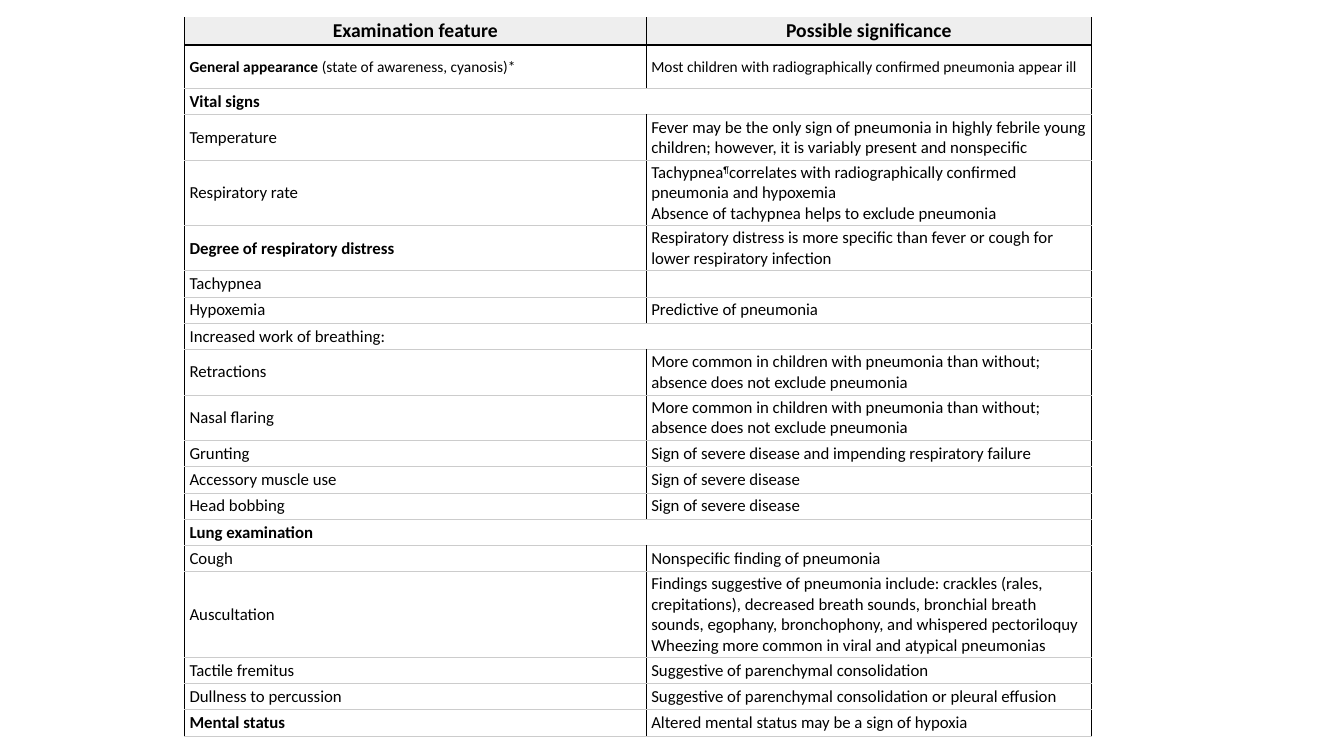
from lxml import etree
from pptx import Presentation
from pptx.dml.color import RGBColor
from pptx.enum.text import MSO_ANCHOR, PP_ALIGN
from pptx.oxml.ns import qn
from pptx.util import Pt

MID = MSO_ANCHOR.MIDDLE
LEFT = PP_ALIGN.LEFT
CENTER = PP_ALIGN.CENTER

BLACK, GRAY, PALE, WHITE = "000000", "CCCCCC", "EEEEEE", "FFFFFF"
ONE, TALL, TWO, THREE, FOUR = 18.72, 31.2, 32.6, 44.64, 58.32
COLS = [329.8, 318.2]


def color(code):
    return RGBColor.from_string(code)


def bold(text):
    return (text, True, False)


def plain(text):
    return (text, False, False)


def raised(text):
    return (text, False, True)


HEAD = ["Examination feature", "Possible significance"]
LEAD = [[bold("General appearance"), plain(" (state of awareness, cyanosis)*")]]
RATE = [
    [plain("Tachypnea"), raised("¶"),
     plain("correlates with radiographically confirmed pneumonia and hypoxemia")],
    [plain("Absence of tachypnea helps to exclude pneumonia")],
]
SOUNDS = [
    [plain("Findings suggestive of pneumonia include: crackles (rales, crepitations), "
           "decreased breath sounds, bronchial breath sounds, egophany, bronchophony, "
           "and whispered pectoriloquy")],
    [plain("Wheezing more common in viral and atypical pneumonias")],
]
COMMON = "More common in children with pneumonia than without; absence does not exclude pneumonia"
SEVERE = "Sign of severe disease"

ROWS = [
    (TALL, LEAD, "Most children with radiographically confirmed pneumonia appear ill"),
    (ONE, [[bold("Vital signs")]], None),
    (TWO, "Temperature", "Fever may be the only sign of pneumonia in highly febrile young "
     "children; however, it is variably present and nonspecific"),
    (THREE, "Respiratory rate", RATE),
    (TALL, [[bold("Degree of respiratory distress")]],
     "Respiratory distress is more specific than fever or cough for lower respiratory infection"),
    (ONE, "Tachypnea", ""),
    (ONE, "Hypoxemia", "Predictive of pneumonia"),
    (ONE, "Increased work of breathing:", None),
    (TWO, "Retractions", COMMON),
    (TWO, "Nasal flaring", COMMON),
    (ONE, "Grunting", "Sign of severe disease and impending respiratory failure"),
    (ONE, "Accessory muscle use", SEVERE),
    (ONE, "Head bobbing", SEVERE),
    (ONE, [[bold("Lung examination")]], None),
    (ONE, "Cough", "Nonspecific finding of pneumonia"),
    (FOUR, "Auscultation", SOUNDS),
    (ONE, "Tactile fremitus", "Suggestive of parenchymal consolidation"),
    (ONE, "Dullness to percussion", "Suggestive of parenchymal consolidation or pleural effusion"),
    (ONE, [[bold("Mental status")]], "Altered mental status may be a sign of hypoxia"),
]


class Deck:
    font = "Calibri"

    def __init__(self, width, height):
        self.show = Presentation()
        self.show.slide_width, self.show.slide_height = Pt(width), Pt(height)
        self.slide = self.show.slides.add_slide(self.show.slide_layouts[6])

    def table(self, left, top, widths, heights):
        frame = self.slide.shapes.add_table(
            len(heights), len(widths), Pt(left), Pt(top), Pt(sum(widths)), Pt(sum(heights)))
        table = frame.table
        table.first_row = table.horz_banding = False
        for column, width in zip(table.columns, widths):
            column.width = Pt(width)
        for row, height in zip(table.rows, heights):
            row.height = Pt(height)
        return table

    def edge(self, cell, side, line):
        width, code = line or (0, None)
        node = etree.SubElement(cell._tc.get_or_add_tcPr(), qn("a:ln" + side), w=str(Pt(width)))
        if code is None:
            etree.SubElement(node, qn("a:noFill"))
        else:
            fill = etree.SubElement(node, qn("a:solidFill"))
            etree.SubElement(fill, qn("a:srgbClr"), val=code)

    def box(self, cell, fill, top, bottom):
        side = (0.75, BLACK)
        for name, line in zip("LRTB", (side, side, top, bottom)):
            self.edge(cell, name, line)
        cell.fill.solid()
        cell.fill.fore_color.rgb = color(fill)
        cell.vertical_anchor = MID
        cell.margin_left = cell.margin_right = Pt(3.6)
        cell.margin_top = cell.margin_bottom = Pt(1.44)

    def text(self, cell, paras, size, align=LEFT):
        if isinstance(paras, str):
            paras = [[plain(paras)] if paras else []]
        frame = cell.text_frame
        for index, parts in enumerate(paras):
            para = frame.add_paragraph() if index else frame.paragraphs[0]
            para.alignment = align
            for words, heavy, high in parts:
                run = para.add_run()
                run.text = words
                run.font.name, run.font.size, run.font.bold = self.font, Pt(size), heavy
                run.font.color.rgb = color(BLACK)
                if high:
                    run._r.get_or_add_rPr().set("baseline", "30000")
            if not parts:
                etree.SubElement(para._p, qn("a:endParaRPr"), sz=str(size * 100))


def main():
    deck = Deck(960, 540)
    table = deck.table(131.8, 12.2, COLS, [ONE] + [row[0] for row in ROWS])
    thick, thin = (2.25, BLACK), (0.75, GRAY)
    for col, title in enumerate(HEAD):
        cell = table.cell(0, col)
        deck.box(cell, PALE, None, thick)
        deck.text(cell, [[bold(title)]], 14, CENTER)
    for index, (height, *pair) in enumerate(ROWS, 1):
        first = index == 1
        for col, paras in enumerate(pair):
            cell = table.cell(index, col)
            deck.box(cell, WHITE, thick if first else thin, thin)
            if paras is not None:
                deck.text(cell, paras, 11 if first else 12)
        if pair[1] is None:
            table.cell(index, 0).merge(table.cell(index, 1))
    deck.show.save("out.pptx")


if __name__ == "__main__":
    main()
